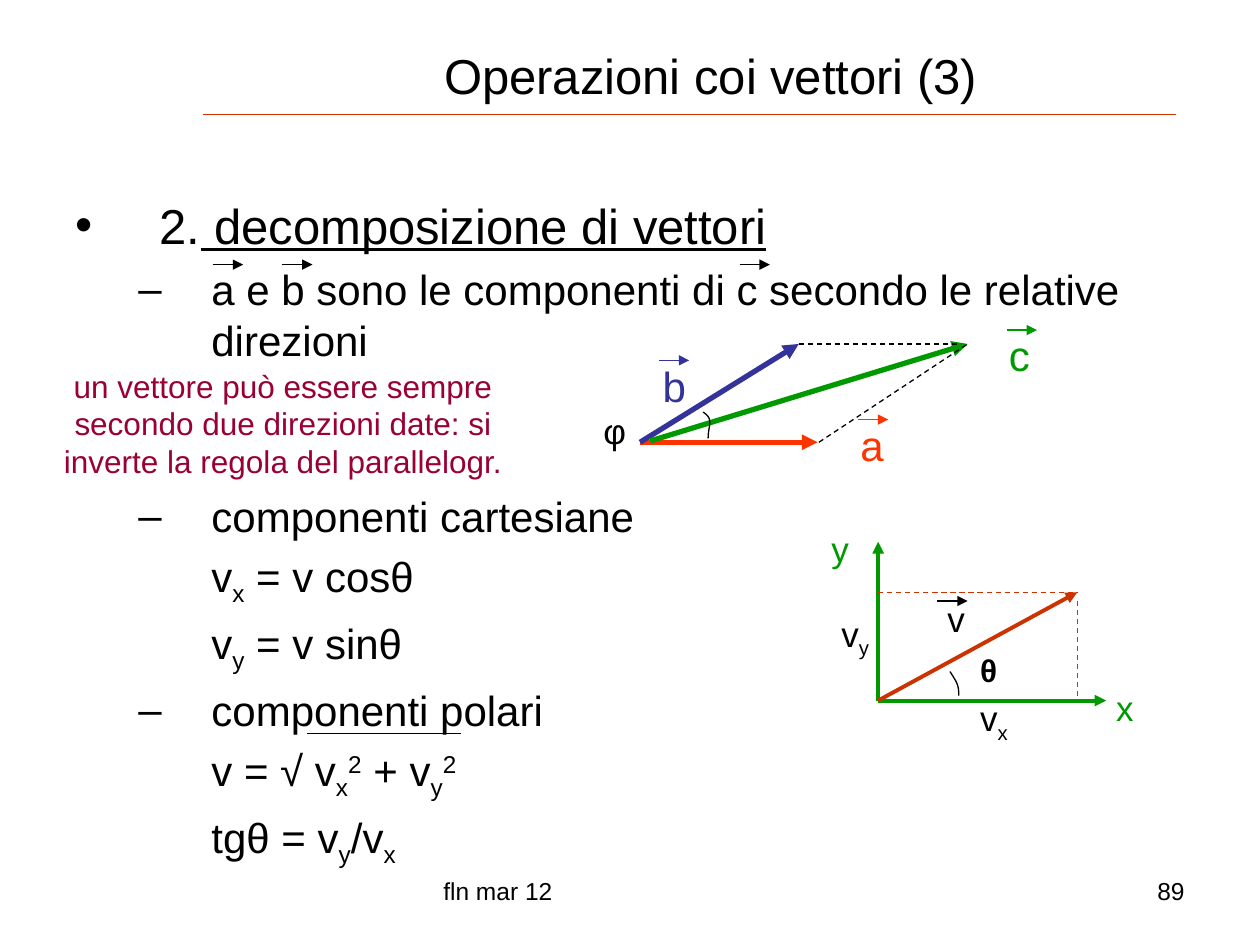
from lxml.etree import SubElement
from pptx import Presentation
from pptx.dml.color import RGBColor
from pptx.enum.dml import MSO_LINE_DASH_STYLE as Dash
from pptx.enum.shapes import MSO_CONNECTOR as Connector
from pptx.enum.text import MSO_ANCHOR as Anchor, PP_ALIGN as Align
from pptx.oxml.ns import qn
from pptx.util import Inches, Pt

BLACK, RED, BLUE, GREEN, BRICK, WINE = "000000", "FF3300", "333399", "009900", "CC3300", "990033"
SUB, SUPER = -25000, 30000
color = RGBColor.from_string

presentation = Presentation()
presentation.slide_width, presentation.slide_height = Inches(10), Inches(7.5)
slide = presentation.slides.add_slide(presentation.slide_layouts[5])
shapes = slide.shapes


def add_line(start, end, line_color=BLACK, width=0.75, arrow=False, dashed=False):
    points = [Inches(value) for value in (*start, *end)]
    connector = shapes.add_connector(Connector.STRAIGHT, *points)
    connector.line.color.rgb = color(line_color)
    connector.line.width = Pt(width)
    if dashed:
        connector.line.dash_style = Dash.DASH
    if arrow:
        SubElement(connector.line._get_or_add_ln(), qn("a:tailEnd"), type="triangle")
    SubElement(connector._element.spPr, qn("a:effectLst"))


def add_text(box, paragraphs, size, text_color=BLACK, align=Align.LEFT, wrap=False, bold=False):
    frame = shapes.add_textbox(*[Inches(value) for value in box]).text_frame
    frame.word_wrap = wrap
    for index, runs in enumerate(paragraphs):
        paragraph = frame.paragraphs[0] if index == 0 else frame.add_paragraph()
        paragraph.alignment = align
        for text, baseline in runs:
            run = paragraph.add_run()
            run.text = text
            font_format = {"name": "Arial", "size": Pt(size), "bold": bold}
            for name, value in font_format.items():
                setattr(run.font, name, value)
            run.font.color.rgb = color(text_color)
            if baseline:
                run._r.get_or_add_rPr().set("baseline", str(baseline))
    return frame


title = shapes.title
title_box = {"left": 1.85, "top": 0.28, "width": 7.58, "height": 0.63}
for name, value in title_box.items():
    setattr(title, name, Inches(value))
title.text_frame.text = "Operazioni coi vettori (3)"
title.text_frame.vertical_anchor = Anchor.MIDDLE
title_paragraph = title.text_frame.paragraphs[0]
title_paragraph.alignment = Align.CENTER
title_format = {"name": "Arial", "size": Pt(28)}
for name, value in title_format.items():
    setattr(title_paragraph.runs[0].font, name, value)
title_paragraph.runs[0].font.color.rgb = color(BLACK)
add_line((1.61, 0.91), (9.33, 0.91), BRICK)

add_text((3.42, 6.9, 3.17, 0.45), [[("fln mar 12", 0)]], 14)
add_text((7.17, 6.9, 2.33, 0.45), [[("89", 0)]], 14, align=Align.RIGHT, wrap=True)

outline = [
    ("•", 0, [("2.", 0), (" decomposizione di vettori", 0)]),
    ("–", 5.5, [("a e b sono le componenti di c secondo le relative direzioni", 0)]),
    ("–", 72, [("componenti cartesiane", 0)]),
    (None, 5.5, [("v", 0), ("x", SUB), (" = v cosθ", 0)]),
    (None, 5.5, [("v", 0), ("y", SUB), (" = v sinθ", 0)]),
    ("–", 5.5, [("componenti polari", 0)]),
    (None, 5.5, [("v = √ v", 0), ("x", SUB), ("2", SUPER), (" + v", 0), ("y", SUB), ("2", SUPER)]),
    (None, 5.5, [("tgθ = v", 0), ("y", SUB), ("/v", 0), ("x", SUB)]),
]
body = add_text((0.5, 1.5, 9, 5.2), [runs for _, _, runs in outline], 24, wrap=True)
for paragraph, (bullet, space, _) in zip(body.paragraphs, outline):
    margin, hanging = (0.67, 0.67) if bullet == "•" else (1.08, 0.58)
    properties = paragraph._p.get_or_add_pPr()
    properties.set("marL", str(Inches(margin)))
    properties.set("indent", str(-Inches(hanging) if bullet else 0))
    if bullet:
        SubElement(properties, qn("a:buFont"), typeface="Arial")
        SubElement(properties, qn("a:buChar"), char=bullet)
    else:
        SubElement(properties, qn("a:buNone"))
    paragraph.space_before = Pt(space)
for run in body.paragraphs[0].runs:
    run.font.size = Pt(28)
body.paragraphs[0].runs[1].font.underline = True

note = ["un vettore può essere sempre", "secondo due direzioni date: si", "inverte la regola del parallelogr."]
add_text((0.35, 2.86, 3.79, 1.01), [[(text, 0)] for text in note], 18, WINE, Align.CENTER)

vectors = [
    ((5.08, 3.51), (6.49, 3.51), RED, 3),
    ((5.08, 3.51), (6.34, 2.73), BLUE, 3),
    ((5.16, 3.5), (7.68, 2.73), GREEN, 3),
    ((6.97, 5.56), (8.78, 5.56), GREEN, 2.25),
    ((6.97, 5.56), (6.97, 4.3), GREEN, 2.25),
    ((6.97, 5.56), (8.55, 4.7), BRICK, 2.25),
]
for start, end, line_color, width in vectors:
    add_line(start, end, line_color, width, arrow=True)

guides = [
    ((6.34, 2.73), (7.6, 2.73), BLACK),
    ((6.5, 3.51), (7.68, 2.73), BLACK),
    ((8.55, 4.77), (8.55, 5.56), BRICK),
    ((6.97, 4.7), (8.55, 4.7), BRICK),
]
for start, end, line_color in guides:
    add_line(start, end, line_color, dashed=True)

over_arrows = [
    (5.23, 2.86, BLUE), (6.81, 3.33, RED), (7.99, 2.62, GREEN), (7.44, 4.77, BLACK),
    (1.69, 2.1, BLACK), (2.24, 2.1, BLACK), (5.87, 2.1, BLACK),
]
for left, top, line_color in over_arrows:
    add_line((left, top), (left + 0.24, top), line_color, arrow=True)
add_line((2.44, 5.82), (3.66, 5.82))

labels = [
    ((5.16, 2.81, 0.39, 0.5), [("b", 0)], 24, BLUE),
    ((6.73, 3.28, 0.39, 0.5), [("a", 0)], 24, RED),
    ((7.91, 2.57, 0.37, 0.5), [("c", 0)], 24, GREEN),
    ((8.76, 5.4, 0.34, 0.43), [("x", 0)], 20, GREEN),
    ((6.5, 4.14, 0.34, 0.43), [("y", 0)], 20, GREEN),
    ((7.68, 5.48, 0.43, 0.43), [("v", 0), ("x", SUB)], 20, BLACK),
    ((6.58, 4.81, 0.43, 0.43), [("v", 0), ("y", SUB)], 20, BLACK),
    ((7.42, 4.69, 0.34, 0.43), [("v", 0)], 20, BLACK),
    ((4.69, 3.2, 0.38, 0.43), [("φ", 0)], 20, BLACK),
]
for box, runs, size, text_color in labels:
    add_text(box, [runs], size, text_color)
add_text((7.68, 5.12, 0.34, 0.4), [[("θ", 0)]], 18, bold=True)

angle_arcs = [
    ((5.58, 3.27), (5.67, 3.33), (5.62, 3.37), (5.62, 3.48)),
    ((7.54, 5.33), (7.59, 5.41), (7.61, 5.43), (7.61, 5.52)),
]
STEPS = 12
for controls in angle_arcs:
    points = []
    for step in range(STEPS + 1):
        t = step / STEPS
        weights = ((1 - t) ** 3, 3 * t * (1 - t) ** 2, 3 * t ** 2 * (1 - t), t ** 3)
        points.append([Inches(sum(w * c[axis] for w, c in zip(weights, controls))) for axis in (0, 1)])
    builder = shapes.build_freeform(*points[0])
    builder.add_line_segments(points[1:], close=False)
    arc = builder.convert_to_shape()
    arc.shadow.inherit = False
    arc.fill.background()
    arc.line.color.rgb = color(BLACK)
    arc.line.width = Pt(0.75)

presentation.save("out.pptx")
